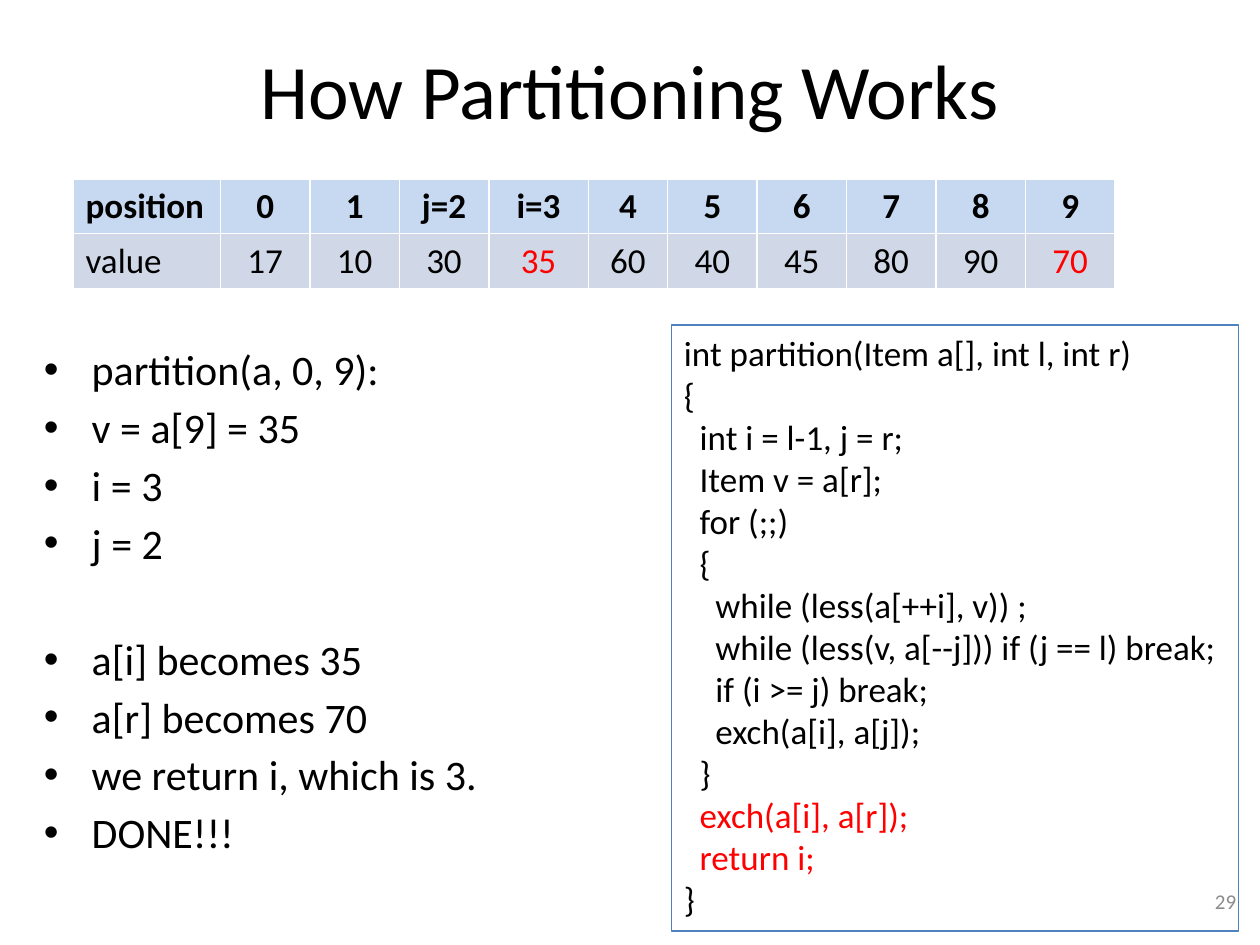
from lxml import etree
from pptx import Presentation
from pptx.dml.color import RGBColor
from pptx.enum.shapes import MSO_SHAPE
from pptx.enum.text import MSO_ANCHOR, PP_ALIGN
from pptx.oxml.ns import qn
from pptx.util import Inches, Pt

LEFT, CENTER, RIGHT = PP_ALIGN.LEFT, PP_ALIGN.CENTER, PP_ALIGN.RIGHT
TOP, MIDDLE = MSO_ANCHOR.TOP, MSO_ANCHOR.MIDDLE
RECTANGLE = MSO_SHAPE.RECTANGLE
TITLE_ONLY = 5
FONT = "Calibri"
BLACK, RED, GREY, BLUE = "000000", "FF0000", "8C8C8C", "4F81BD"
HEADER_FILL, VALUE_FILL = "C6D9F1", "D0D8E8"

POSITIONS = ["position", "0", "1", "j=2", "i=3", "4", "5", "6", "7", "8", "9"]
VALUES = ["value", "17", "10", "30", "35", "60", "40", "45", "80", "90", "70"]
RED_VALUES = {"35", "70"}
COLUMN_WIDTHS = {0: 1.17, 4: 0.79, 5: 0.63}
USUAL_WIDTH = 0.71

STEP_GROUPS = [
    ["partition(a, 0, 9):", "v = a[9] = 35", "i = 3", "j = 2"],
    ["a[i] becomes 35", "a[r] becomes 70", "we return i, which is 3.", "DONE!!!"],
]
STEP_GAP, GROUP_GAP = 4.2, 37.7

CODE = [
    (0, "int partition(Item a[], int l, int r)", BLACK),
    (0, "{", BLACK),
    (1, "int i = l-1, j = r;", BLACK),
    (1, "Item v = a[r];", BLACK),
    (1, "for (;;)", BLACK),
    (1, "{", BLACK),
    (2, "while (less(a[++i], v)) ;", BLACK),
    (2, "while (less(v, a[--j])) if (j == l) break;", BLACK),
    (2, "if (i >= j) break;", BLACK),
    (2, "exch(a[i], a[j]);", BLACK),
    (1, "}", BLACK),
    (1, "exch(a[i], a[r]);", RED),
    (1, "return i;", RED),
    (0, "}", BLACK),
]
CODE_INDENT = 0.125


def color(value):
    return RGBColor.from_string(value)


def inches(box):
    return [Inches(n) for n in box]


def write(p, text, size, fill=BLACK, align=LEFT, bold=False):
    p.alignment = align
    r = p.add_run()
    r.text = text
    for name, value in {"name": FONT, "size": Pt(size), "bold": bold}.items():
        setattr(r.font, name, value)
    r.font.color.rgb = color(fill)


def set_indent(p, left, first=0):
    pPr = p._p.get_or_add_pPr()
    pPr.set("marL", str(Inches(left)))
    pPr.set("indent", str(Inches(first)))
    return pPr


def next_paragraph(tf, index):
    return tf.add_paragraph() if index else tf.paragraphs[0]


def add_text_box(s, box, anchor=TOP):
    tf = s.shapes.add_textbox(*inches(box)).text_frame
    tf.word_wrap = True
    tf.vertical_anchor = anchor
    return tf


def place_title(s, box, text):
    sp = s.shapes.title
    for name, value in zip(("left", "top", "width", "height"), inches(box)):
        setattr(sp, name, value)
    sp.text_frame.vertical_anchor = MIDDLE
    write(sp.text_frame.paragraphs[0], text, 44, align=CENTER)


def add_array_table(s, box):
    rows = [(POSITIONS, HEADER_FILL, True), (VALUES, VALUE_FILL, False)]
    table = s.shapes.add_table(len(rows), len(POSITIONS), *inches(box)).table
    for i, column in enumerate(table.columns):
        column.width = Inches(COLUMN_WIDTHS.get(i, USUAL_WIDTH))
    for i, (texts, fill, bold) in enumerate(rows):
        for j, text in enumerate(texts):
            cell = table.cell(i, j)
            cell.fill.solid()
            cell.fill.fore_color.rgb = color(fill)
            write(cell.text_frame.paragraphs[0], text, 20,
                  RED if text in RED_VALUES else BLACK,
                  CENTER if j else LEFT, bold)


def add_steps(s, box):
    tf = add_text_box(s, box)
    steps = [(text, GROUP_GAP if g and not i else STEP_GAP)
             for g, group in enumerate(STEP_GROUPS)
             for i, text in enumerate(group)]
    for i, (text, gap) in enumerate(steps):
        p = next_paragraph(tf, i)
        write(p, text, 24)
        p.space_before = Pt(gap if i else 0)
        pPr = set_indent(p, 0.38, -0.38)
        etree.SubElement(pPr, qn("a:buFont")).set("typeface", "Arial")
        etree.SubElement(pPr, qn("a:buChar")).set("char", "•")


def add_code(s, box):
    sp = s.shapes.add_shape(RECTANGLE, *inches(box))
    sp.shadow.inherit = False
    sp.fill.background()
    sp.line.color.rgb = color(BLUE)
    sp.line.width = Pt(0.75)
    tf = sp.text_frame
    tf.word_wrap = True
    tf.vertical_anchor = TOP
    for i, (level, text, fill) in enumerate(CODE):
        p = next_paragraph(tf, i)
        write(p, text, 20, fill)
        set_indent(p, level * CODE_INDENT)


def add_slide_number(s, box, number):
    tf = add_text_box(s, box, MIDDLE)
    write(tf.paragraphs[0], number, 12, GREY, RIGHT)


def main():
    prs = Presentation()
    prs.slide_width, prs.slide_height = Inches(10), Inches(7.5)
    s = prs.slides.add_slide(prs.slide_layouts[TITLE_ONLY])
    place_title(s, (0.5, 0.08, 9, 1.25), "How Partitioning Works")
    add_steps(s, (0.25, 2.68, 5, 4.32))
    add_slide_number(s, (7.58, 6.95, 2.33, 0.4), "29")
    add_array_table(s, (0.58, 1.42, 8.25, 0.87))
    add_code(s, (5.33, 2.58, 4.5, 4.81))
    prs.save("out.pptx")


if __name__ == "__main__":
    main()
